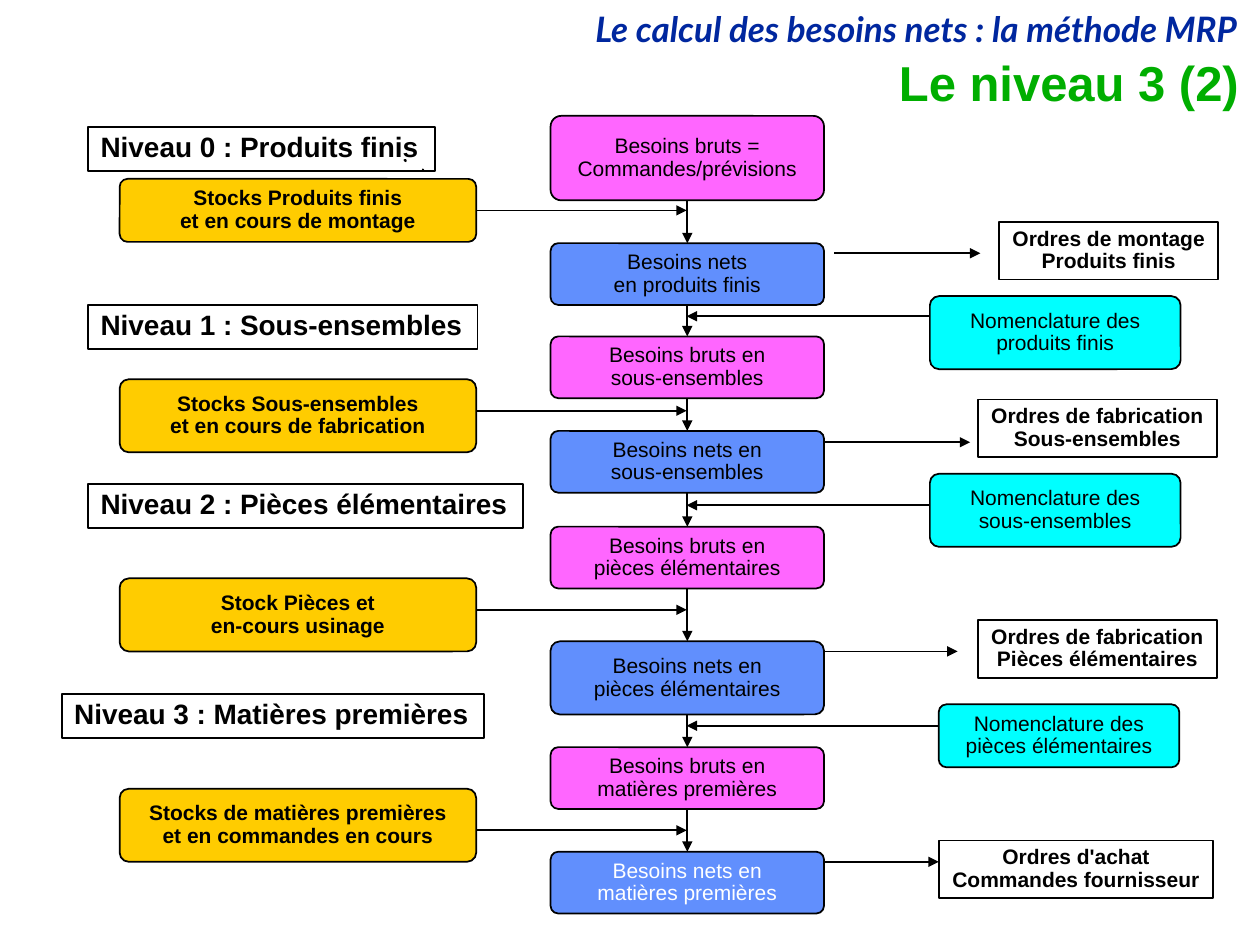
from pptx import Presentation
from pptx.dml.color import RGBColor
from pptx.enum.shapes import MSO_CONNECTOR as CONN, MSO_SHAPE as SHAPE
from pptx.enum.text import MSO_ANCHOR as ANCHOR, MSO_AUTO_SIZE as AUTO, PP_ALIGN as ALIGN
from pptx.oxml.ns import qn
from pptx.util import Inches, Pt
from lxml import etree

BLACK, WHITE = "000000", "FFFFFF"
PINK, BLUE, GOLD, CYAN = "FF66FF", "618FFD", "FFCC00", "00FFFF"
BOTTOM, TOP, RIGHT = 2, 0, 3
FLOW_X, FLOW_W = 4.37, 2.17
AXIS = 5.45


def rgb(value):
    return RGBColor.from_string(value)


class Deck:
    """Holds the style and the current slide."""

    body = {"name": "Arial", "size": Pt(12), "bold": False}
    strong = {**body, "bold": True}
    level = {**strong, "size": Pt(16)}

    def __init__(self):
        self.prs = Presentation()
        self.prs.slide_width, self.prs.slide_height = Inches(10), Inches(7.5)
        self.s = self.prs.slides.add_slide(self.prs.slide_layouts[6])

    def put_text(self, sp, text, fmt, color=BLACK, align=ALIGN.CENTER):
        tf = sp.text_frame
        for i, line in enumerate(text.split("\n")):
            p = tf.paragraphs[0] if i == 0 else tf.add_paragraph()
            p.alignment, p.line_spacing = align, 0.9
            r = p.add_run()
            r.text = line
            for key, value in fmt.items():
                setattr(r.font, key, value)
            r.font.color.rgb = rgb(color)

    def heading(self, x, y, w, h, text, fmt, color):
        sp = self.s.shapes.add_textbox(*map(Inches, (x, y, w, h)))
        sp.text_frame.word_wrap = True
        self.put_text(sp, text, fmt, color, ALIGN.RIGHT)

    def outline(self, sp):
        sp.shadow.inherit = False
        sp.line.color.rgb = rgb(BLACK)
        sp.line.width = Pt(1)

    def box(self, kind, x, y, w, h):
        sp = self.s.shapes.add_shape(kind, *map(Inches, (x, y, w, h)))
        self.outline(sp)
        sp.text_frame.word_wrap = False
        return sp

    def rounded(self, x, y, w, h, text, fill, fmt=body, color=BLACK):
        sp = self.box(SHAPE.ROUNDED_RECTANGLE, x, y, w, h)
        sp.adjustments[0] = 0.125
        sp.fill.solid()
        sp.fill.fore_color.rgb = rgb(fill)
        sp.text_frame.vertical_anchor = ANCHOR.MIDDLE
        self.put_text(sp, text, fmt, color)
        return sp

    def frame(self, x, y, w, h, text, fmt=strong, align=ALIGN.CENTER):
        sp = self.box(SHAPE.RECTANGLE, x, y, w, h)
        sp.fill.background()
        sp.text_frame.vertical_anchor = ANCHOR.TOP
        sp.text_frame.auto_size = AUTO.SHAPE_TO_FIT_TEXT
        self.put_text(sp, text, fmt, align=align)

    def line(self, x1, y1, x2, y2, arrow=True):
        c = self.s.shapes.add_connector(CONN.STRAIGHT, *map(Inches, (x1, y1, x2, y2)))
        c.line.color.rgb = rgb(BLACK)
        c.line.width = Pt(1)
        if arrow:
            etree.SubElement(c.get_or_add_ln(), qn("a:tailEnd"), type="triangle")
        etree.SubElement(c._element.spPr, qn("a:effectLst"))
        return c

    def speck(self, x, y, size):
        fb = self.s.shapes.build_freeform(Inches(x), Inches(y))
        fb.add_line_segments([(Inches(x + size), Inches(y)),
                              (Inches(x + size), Inches(y + size))])
        sp = fb.convert_to_shape()
        sp.fill.background()
        self.outline(sp)


# text, top, height, fill, text colour
FLOW = [
    ("Besoins bruts =\nCommandes/prévisions", 0.92, 0.67, PINK, BLACK),
    ("Besoins nets\nen produits finis", 1.93, 0.49, BLUE, BLACK),
    ("Besoins bruts en\nsous-ensembles", 2.67, 0.49, PINK, BLACK),
    ("Besoins nets en\nsous-ensembles", 3.42, 0.49, BLUE, BLACK),
    ("Besoins bruts en\npièces élémentaires", 4.18, 0.49, PINK, BLACK),
    ("Besoins nets en\npièces élémentaires", 5.09, 0.58, BLUE, BLACK),
    ("Besoins bruts en\nmatières premières", 5.93, 0.49, PINK, BLACK),
    ("Besoins nets en\nmatières premières", 6.76, 0.49, BLUE, WHITE),
]
# text, left, top, width
LEVELS = [
    ("Niveau 0 : Produits finis", 0.7, 1.01, 2.75),
    ("Niveau 1 : Sous-ensembles", 0.7, 2.42, 3.09),
    ("Niveau 2 : Pièces élémentaires", 0.7, 3.84, 3.45),
    ("Niveau 3 : Matières premières", 0.49, 5.51, 3.35),
]
# text, top, height, arrow height
STOCKS = [
    ("Stocks Produits finis\net en cours de montage", 1.42, 0.5, 1.67),
    ("Stocks Sous-ensembles\net en cours de fabrication", 3.01, 0.58, 3.26),
    ("Stock Pièces et\nen-cours usinage", 4.59, 0.58, 4.84),
    ("Stocks de matières premières\net en commandes en cours", 6.26, 0.58, 6.59),
]
# text, left, top, width, height, arrow height
PARTS_LISTS = [
    ("Nomenclature des\nproduits finis", 7.38, 2.35, 1.99, 0.58, 2.51),
    ("Nomenclature des\nsous-ensembles", 7.38, 3.76, 1.99, 0.58, 4.01),
    ("Nomenclature des\npièces élémentaires", 7.45, 5.59, 1.91, 0.5, 5.76),
]
# text, left, top, width, arrow start, arrow end, arrow height
ORDERS = [
    ("Ordres de montage\nProduits finis", 7.93, 1.76, 1.74, 6.62, 7.78, 2.01),
    ("Ordres de fabrication\nSous-ensembles", 7.76, 3.17, 1.9, 6.53, 7.7, 3.51),
    ("Ordres de fabrication\nPièces élémentaires", 7.76, 4.92, 1.9, 6.53, 7.6, 5.17),
    ("Ordres d'achat\nCommandes fournisseur", 7.45, 6.67, 2.18, 6.53, 7.45, 6.84),
]


def main():
    d = Deck()

    # Headings
    d.heading(0, 0.05, 9.92, 0.4, "Le calcul des besoins nets : la méthode MRP",
              {"name": "Lato", "size": Pt(20), "bold": True, "italic": True}, "00279F")
    d.heading(2.01, 0.42, 7.92, 0.5, "Le niveau 3 (2)",
              {**d.strong, "size": Pt(28)}, "00AE00")

    # Small marks by the first level
    d.speck(3.21, 1.27, 0.01)
    d.line(3.35, 1.36, 3.36, 1.34, arrow=False)

    # Level labels
    for text, x, y, w in LEVELS:
        d.frame(x, y, w, 0.35, text, d.level, ALIGN.LEFT)

    # Central chain, each box joined to the next
    chain = [d.rounded(FLOW_X, y, FLOW_W, h, text, fill, color=color)
             for text, y, h, fill, color in FLOW]
    for upper, lower in zip(chain, chain[1:]):
        c = d.line(AXIS, 0, AXIS, 1)
        c.begin_connect(upper, BOTTOM)
        c.end_connect(lower, TOP)

    # Stocks feeding the chain from the left
    for text, y, h, arrow_y in STOCKS:
        sp = d.rounded(0.95, y, 2.83, h, text, GOLD, d.strong)
        c = d.line(3.78, arrow_y, AXIS, arrow_y)
        if abs(y + h / 2 - arrow_y) < 0.01:
            c.begin_connect(sp, RIGHT)

    # Parts lists feeding the chain from the right
    for text, x, y, w, h, arrow_y in PARTS_LISTS:
        d.rounded(x, y, w, h, text, CYAN)
        d.line(x, arrow_y, AXIS, arrow_y)

    # Orders leaving the chain
    for text, x, y, w, start, end, arrow_y in ORDERS:
        d.frame(x, y, w, 0.46, text)
        d.line(start, arrow_y, end, arrow_y)

    d.prs.save("out.pptx")


if __name__ == "__main__":
    main()
